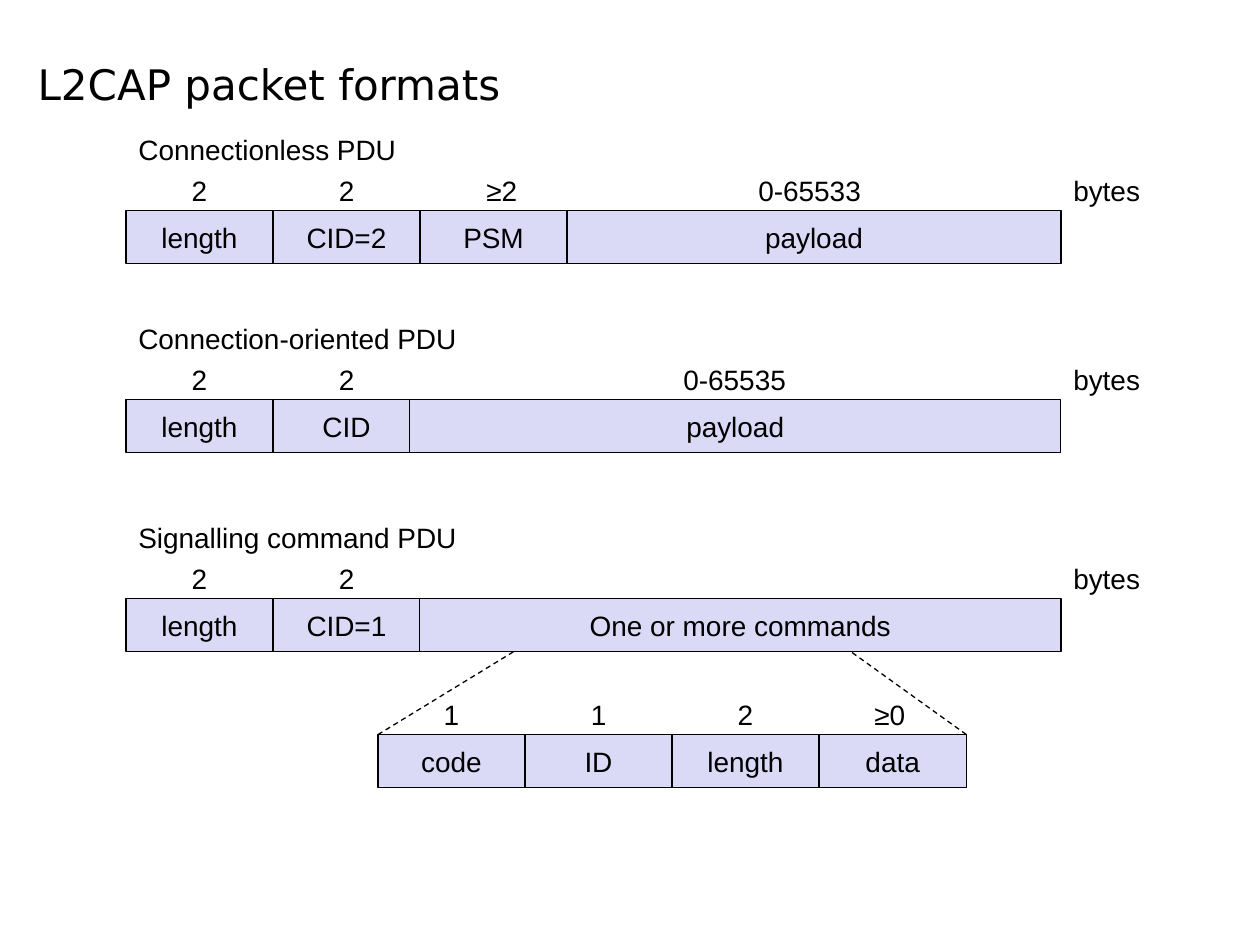
from lxml import etree
from pptx import Presentation
from pptx.dml.color import RGBColor
from pptx.enum.dml import MSO_LINE
from pptx.enum.shapes import MSO_CONNECTOR, MSO_SHAPE
from pptx.enum.text import MSO_ANCHOR, MSO_AUTO_SIZE, PP_ALIGN
from pptx.oxml.ns import qn
from pptx.util import Inches, Pt

RECTANGLE, STRAIGHT, DASH = MSO_SHAPE.RECTANGLE, MSO_CONNECTOR.STRAIGHT, MSO_LINE.DASH
TOP, MIDDLE, BOTTOM = MSO_ANCHOR.TOP, MSO_ANCHOR.MIDDLE, MSO_ANCHOR.BOTTOM
LEFT, CENTER = PP_ALIGN.LEFT, PP_ALIGN.CENTER
FIT, NO_FIT = MSO_AUTO_SIZE.SHAPE_TO_FIT_TEXT, MSO_AUTO_SIZE.NONE

# Content: each field is (name, byte count, shift of the byte count from centre)
TITLE = "L2CAP packet formats"
UNIT = "bytes"
PACKETS = [
    {"caption": "Connectionless PDU", "caption_width": 2.25,
     "left": 1, "top": 1.67, "last_left": 4.5, "right": 8.42,
     "fields": [("length", "2", 0), ("CID=2", "2", 0), ("PSM", "≥2", 0.07),
                ("payload", "0-65533", -0.03)]},
    {"caption": "Connection-oriented PDU", "caption_width": 2.73,
     "left": 1, "top": 3.17, "last_left": 3.25, "right": 8.42,
     "fields": [("length", "2", 0), ("CID", "2", 0), ("payload", "0-65535", 0)]},
    {"caption": "Signalling command PDU", "caption_width": 2.73,
     "left": 1, "top": 4.75, "last_left": 3.33, "right": 8.42,
     "fields": [("length", "2", 0), ("CID=1", "2", 0),
                ("One or more commands", "", 0)]},
    {"caption": "", "left": 3, "top": 5.83, "last_left": 6.5, "right": 7.67,
     "fields": [("code", "1", 0), ("ID", "1", 0), ("length", "2", 0),
                ("data", "≥0", -0.02)]},
]
# Dashed lines that expand the commands field: (command corner, point below the field)
EXPANSION = [(3, 4.08), (7.67, 6.75)]

THEME = {
    "ink": RGBColor(0x00, 0x00, 0x00), "field": RGBColor(0xDA, 0xDA, 0xF6),
    "title_font": "DejaVu Sans", "title_size": Pt(24),
    "font": "Arial", "size": Pt(16), "line": Pt(0.75),
}

# Measures in inches
FIELD_WIDTH, FIELD_HEIGHT = 7 / 6, 0.42
TEXT_HEIGHT, COUNT_RISE, CAPTION_RISE = 0.37, 0.34, 0.67
COUNT_WIDTHS = {1: 0.32, 2: 0.45, 7: 1.02}  # by number of characters

presentation = Presentation()
presentation.slide_width, presentation.slide_height = Inches(10), Inches(7.5)
slide = presentation.slides.add_slide(presentation.slide_layouts[6])


def write(frame, text, font="font", size="size", anchor=TOP, align=LEFT,
          wrap=False, fit=FIT):
    frame.word_wrap, frame.auto_size, frame.vertical_anchor = wrap, fit, anchor
    paragraph = frame.paragraphs[0]
    paragraph.alignment = align
    run = paragraph.add_run()
    run.text = text
    run.font.name, run.font.size = THEME[font], THEME[size]
    run.font.color.rgb = THEME["ink"]


def add_label(text, left, top, width, height=TEXT_HEIGHT, **style):
    label = slide.shapes.add_textbox(*map(Inches, (left, top, width, height)))
    write(label.text_frame, text, **style)


def add_field(name, left, top, width):
    field = slide.shapes.add_shape(
        RECTANGLE, *map(Inches, (left, top, width, FIELD_HEIGHT)))
    field.shadow.inherit = False
    field.fill.solid()
    field.fill.fore_color.rgb = THEME["field"]
    field.line.color.rgb, field.line.width = THEME["ink"], THEME["line"]
    write(field.text_frame, name, anchor=MIDDLE, align=CENTER, fit=NO_FIT)


def add_packet(packet):
    top, last = packet["top"], len(packet["fields"]) - 1
    for i, (name, count, shift) in enumerate(packet["fields"]):
        left, width = packet["left"] + i * FIELD_WIDTH, FIELD_WIDTH
        if i == last:
            left = packet["last_left"]
            width = packet["right"] - left
        add_field(name, left, top, width)
        if count:
            count_width = COUNT_WIDTHS[len(count)]
            add_label(count, left + (width - count_width) / 2 + shift,
                      top - COUNT_RISE, count_width)
    if packet["caption"]:
        add_label(packet["caption"], packet["left"], top - CAPTION_RISE,
                  packet["caption_width"])
        add_label(UNIT, packet["right"], top - COUNT_RISE, 0.73)


# Title
add_label(TITLE, 0.2, 0, 6.61, 0.91, font="title_font", size="title_size",
          anchor=BOTTOM, wrap=True, fit=NO_FIT)

# Packets
for packet in PACKETS:
    add_packet(packet)

# Expansion of the signalling commands
signalling, command = PACKETS[2:]
for corner, target in EXPANSION:
    guide = slide.shapes.add_connector(
        STRAIGHT, Inches(corner), Inches(command["top"]),
        Inches(target), Inches(signalling["top"] + FIELD_HEIGHT))
    guide.line.color.rgb, guide.line.width = THEME["ink"], THEME["line"]
    guide.line.dash_style = DASH
    etree.SubElement(guide._element.spPr, qn("a:effectLst"))

presentation.save("out.pptx")
